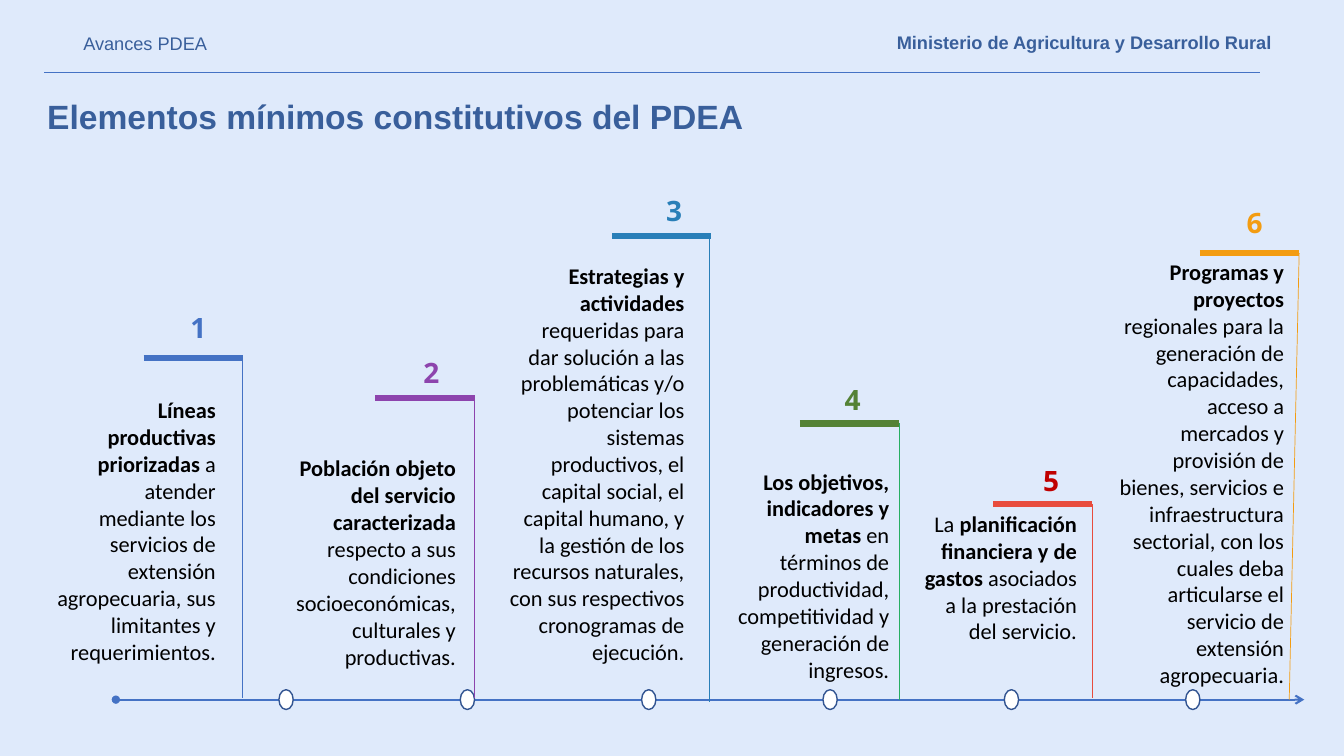
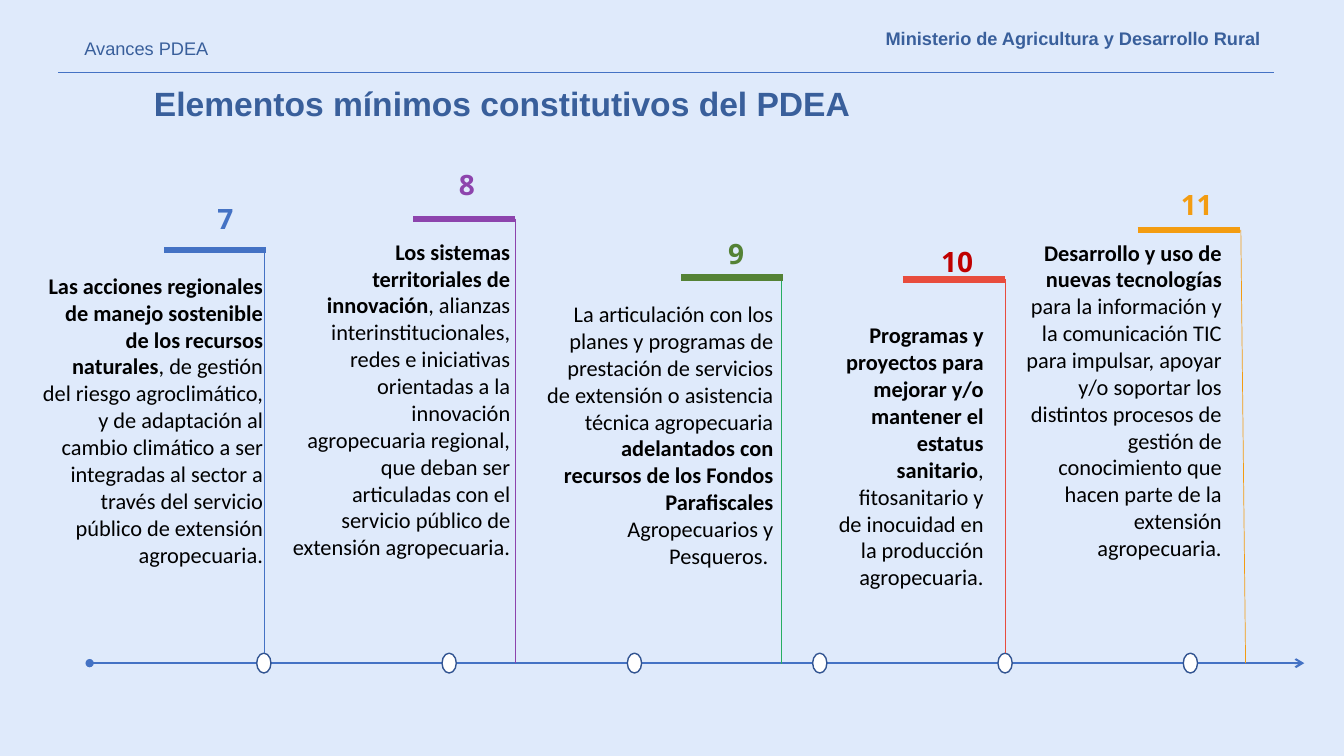
from lxml import etree
from pptx import Presentation
from pptx import util as u
from pptx.dml.color import RGBColor
from pptx.enum import shapes, text
from pptx.oxml.ns import qn

Cm, Pt = u.Cm, u.Pt

# Colours
SKY = RGBColor(0xDF, 0xEA, 0xFB)
NAVY = RGBColor(0x39, 0x5F, 0x9B)
BEAD_EDGE = RGBColor(0x32, 0x54, 0x91)
WHITE = RGBColor(0xFF, 0xFF, 0xFF)
BLACK = RGBColor(0x00, 0x00, 0x00)
BLUE = RGBColor(0x44, 0x72, 0xC4)
PURPLE = RGBColor(0x8D, 0x44, 0xAD)
OCEAN = RGBColor(0x29, 0x7F, 0xB8)
GREEN = RGBColor(0x27, 0xAE, 0x61)
MOSS = RGBColor(0x54, 0x82, 0x35)
CORAL = RGBColor(0xE8, 0x4C, 0x3D)
RED = RGBColor(0xC0, 0x00, 0x00)
ORANGE = RGBColor(0xF3, 0x9C, 0x11)

# Text styles
TITLE = {"name": "Arial", "size": Pt(24), "bold": True}
MINISTRY = {"name": "Arial", "size": Pt(13), "bold": True}
TOPIC = {"name": "Arial", "size": Pt(13), "bold": False}
NUMBER = {"name": "Open Sans", "size": Pt(20), "bold": True}
BODY = {"name": "Calibri", "size": Pt(16), "bold": False}

# Number, stem and bar colours of each item
BLUE_SET = (BLUE, BLUE, BLUE)
PURPLE_SET = (PURPLE, PURPLE, PURPLE)
OCEAN_SET = (OCEAN, OCEAN, OCEAN)
GREEN_SET = (MOSS, GREEN, MOSS)
RED_SET = (RED, CORAL, CORAL)
ORANGE_SET = (ORANGE, ORANGE, ORANGE)

# Each slide, in centimetres. A stem is its top x, its foot x and its foot y;
# a foot given as one bead index is joined to that bead. Bold words stand
# between asterisks.
SLIDES = [
    {
        "ministry": (22.35, 0.66), "topic": (1.85, 0.69), "title": (0.94, 2.41),
        "rule_left": 1.12, "axis": (2.92, 17.63), "beads": (7.21, 4.57),
        "bar_width": 2.5,
        "items": [
            ("1", BLUE_SET, (5, 8.24), (6.12, 9.02), (6.1, 6.1, 17.6),
             (1.12, 9.86, 4.57, 7.09),
             "*Líneas productivas priorizadas* a atender mediante los servicios "
             "de extensión agropecuaria, sus limitantes y requerimientos."),
            ("2", PURPLE_SET, (10.87, 9.39), (11.96, 10.03), (11.96, 11.96, 17.6),
             (6.48, 11.33, 5.26, 5.74),
             "*Población objeto del servicio caracterizada *respecto a sus "
             "condiciones socioeconómicas, culturales y productivas."),
            ("3", OCEAN_SET, (16.99, 5.3), (17.93, 5.94), (17.88, 17.88, 17.68),
             (12.52, 6.48, 4.98, 11.2),
             "*Estrategias y actividades *requeridas para dar solución a las "
             "problemáticas y/o potenciar los sistemas productivos, el capital "
             "social, el capital humano, y la gestión de los recursos naturales, "
             "con sus respectivos cronogramas de ejecución."),
            ("4", GREEN_SET, (21.49, 10.07), (22.66, 10.67), (22.66, 22.66, 17.65),
             (18.24, 11.66, 4.42, 5.74),
             "*Los objetivos, indicadores y metas* en términos de productividad, "
             "competitividad y generación de ingresos."),
            ("5", RED_SET, (26.49, 12.1), (27.53, 12.7), (27.53, 27.53, 17.6),
             (22.94, 12.73, 4.45, 5.05),
             "La *planificación financiera y de gastos *asociados a la "
             "prestación del servicio."),
            ("6", ORANGE_SET, (31.62, 5.59), (32.74, 6.38), (32.74, 32.49, 17.63),
             (27.86, 6.38, 4.75, 11.2),
             "*Programas y proyectos* regionales para la generación de "
             "capacidades, acceso a mercados y provisión de bienes, servicios e "
             "infraestructura sectorial, con los cuales deba articularse el "
             "servicio de extensión agropecuaria."),
        ],
    },
    {
        "ministry": (22.07, 0.56), "topic": (1.88, 0.81), "title": (3.63, 2.08),
        "rule_left": 1.47, "axis": (2.26, 16.71), "beads": (6.65, 4.67),
        "bar_width": 2.57,
        "items": [
            ("7", BLUE_SET, (5.68, 5.51), (6.71, 6.3), (6.65, 0),
             (0.81, 6.73, 6.07, 8.46),
             "*Las acciones regionales de manejo sostenible de los recursos "
             "naturales*, de gestión del riesgo agroclimático, y de adaptación al "
             "cambio climático a ser integradas al sector a través del servicio "
             "público de extensión agropecuaria."),
            ("8", PURPLE_SET, (11.77, 4.65), (12.98, 5.51), (12.98, 12.98, 16.71),
             (7.04, 5.87, 6.07, 8.46),
             "*Los sistemas territoriales de innovación*, alianzas "
             "interinstitucionales, redes e iniciativas orientadas a la "
             "innovación agropecuaria regional, que deban ser articuladas con el "
             "servicio público de extensión agropecuaria."),
            ("9", GREEN_SET, (18.55, 6.38), (19.74, 6.99), (19.69, 19.69, 16.74),
             (13.44, 7.44, 6.3, 7.09),
             "La articulación con los planes y programas de prestación de "
             "servicios de extensión o asistencia técnica agropecuaria "
             "*adelantados con recursos de los Fondos Parafiscales *Agropecuarios "
             "y Pesqueros. "),
            ("10", RED_SET, (24.12, 6.58), (25.32, 7.04), (25.33, 4),
             (20.8, 7.98, 4.24, 7.09),
             "*Programas y proyectos para mejorar y/o mantener el estatus "
             "sanitario*, fitosanitario y de inocuidad en la producción "
             "agropecuaria."),
            ("11", ORANGE_SET, (30.16, 5.16), (31.24, 5.79), (31.27, 31.39, 16.71),
             (25.6, 5.89, 5.44, 8.46),
             "*Desarrollo y uso de nuevas tecnologías *para la información y la "
             "comunicación TIC para impulsar, apoyar y/o soportar los distintos "
             "procesos de gestión de conocimiento que hacen parte de la extensión "
             "agropecuaria."),
        ],
    },
]

RULE_Y, RULE_LENGTH = 1.83, 30.63
AXIS_RIGHT = 32.87
BEAD_COUNT, BEAD_WIDTH, BEAD_HEIGHT = 6, 0.36, 0.5
NUMBER_WIDTH, NUMBER_HEIGHT = 1.4, 1.2


def add_text(slide, box, words, style, colour, align=text.PP_ALIGN.LEFT, wrap=True):
    """Add a text box; words between asterisks are bold."""
    frame = slide.shapes.add_textbox(*map(Cm, box)).text_frame
    frame.word_wrap = wrap
    paragraph = frame.paragraphs[0]
    paragraph.alignment = align
    for index, piece in enumerate(words.split("*")):
        if piece:
            run = paragraph.add_run()
            run.text = piece
            for key, value in style.items():
                setattr(run.font, key, value)
            run.font.bold = style["bold"] or index % 2 == 1
            run.font.color.rgb = colour
    return frame


def add_line(slide, start, end, colour, width):
    """Add a straight line without shadow."""
    line = slide.shapes.add_connector(
        shapes.MSO_CONNECTOR.STRAIGHT, *map(Cm, (*start, *end)))
    line.line.color.rgb = colour
    line.line.width = Pt(width)
    etree.SubElement(line._element.spPr, qn("a:effectLst"))
    return line


prs = Presentation()
prs.slide_width, prs.slide_height = Cm(33.87), Cm(19.05)
background = prs.slide_master.background.fill
background.solid()
background.fore_color.rgb = SKY

for page in SLIDES:
    slide = prs.slides.add_slide(prs.slide_layouts[6])

    # Header and title
    add_text(slide, (*page["ministry"], 10.08, 0.81),
             "Ministerio de Agricultura y Desarrollo Rural", MINISTRY, NAVY, wrap=False)
    add_text(slide, (*page["topic"], 3.66, 0.81), "Avances PDEA", TOPIC, NAVY, wrap=False)
    rule_left = page["rule_left"]
    add_line(slide, (rule_left, RULE_Y), (rule_left + RULE_LENGTH, RULE_Y), BLUE, 0.5)
    title = add_text(slide, (*page["title"], 18.97, 1.17),
                     "Elementos mínimos constitutivos del PDEA", TITLE, NAVY)
    title.paragraphs[0].line_spacing = 0.9

    # Time axis
    axis_left, axis_y = page["axis"]
    axis = add_line(slide, (axis_left, axis_y), (AXIS_RIGHT, axis_y), BLUE, 1.5)
    for end, kind in (("a:headEnd", "oval"), ("a:tailEnd", "arrow")):
        etree.SubElement(axis.line._get_or_add_ln(), qn(end), type=kind)

    # Beads on the axis
    first_bead, bead_step = page["beads"]
    beads = []
    for index in range(BEAD_COUNT):
        bead = slide.shapes.add_shape(
            shapes.MSO_SHAPE.OVAL,
            Cm(first_bead + index * bead_step - BEAD_WIDTH / 2),
            Cm(axis_y - BEAD_HEIGHT / 2), Cm(BEAD_WIDTH), Cm(BEAD_HEIGHT))
        bead.shadow.inherit = False
        bead.fill.solid()
        bead.fill.fore_color.rgb = WHITE
        bead.line.color.rgb = BEAD_EDGE
        bead.line.width = Pt(1)
        beads.append(bead)

    # Numbered items: stem, bar, number, description
    for number, colours, centre, bar_end, stem, body_box, words in page["items"]:
        number_colour, stem_colour, bar_colour = colours
        bar_right, bar_y = bar_end
        stem_top, *foot = stem
        if len(foot) == 1:
            stem_line = add_line(slide, (stem_top, bar_y), (stem_top, axis_y),
                                 stem_colour, 0.5)
            stem_line.end_connect(beads[foot[0]], 0)
        else:
            add_line(slide, (stem_top, bar_y), foot, stem_colour, 0.5)
        add_line(slide, (bar_right - page["bar_width"], bar_y), bar_end, bar_colour, 4.5)

        number_box = (centre[0] - NUMBER_WIDTH / 2, centre[1] - NUMBER_HEIGHT / 2,
                      NUMBER_WIDTH, NUMBER_HEIGHT)
        label = add_text(slide, number_box, number, NUMBER, number_colour,
                         text.PP_ALIGN.CENTER)
        label.vertical_anchor = text.MSO_ANCHOR.MIDDLE
        add_text(slide, body_box, words, BODY, BLACK, text.PP_ALIGN.RIGHT)

prs.save("out.pptx")
